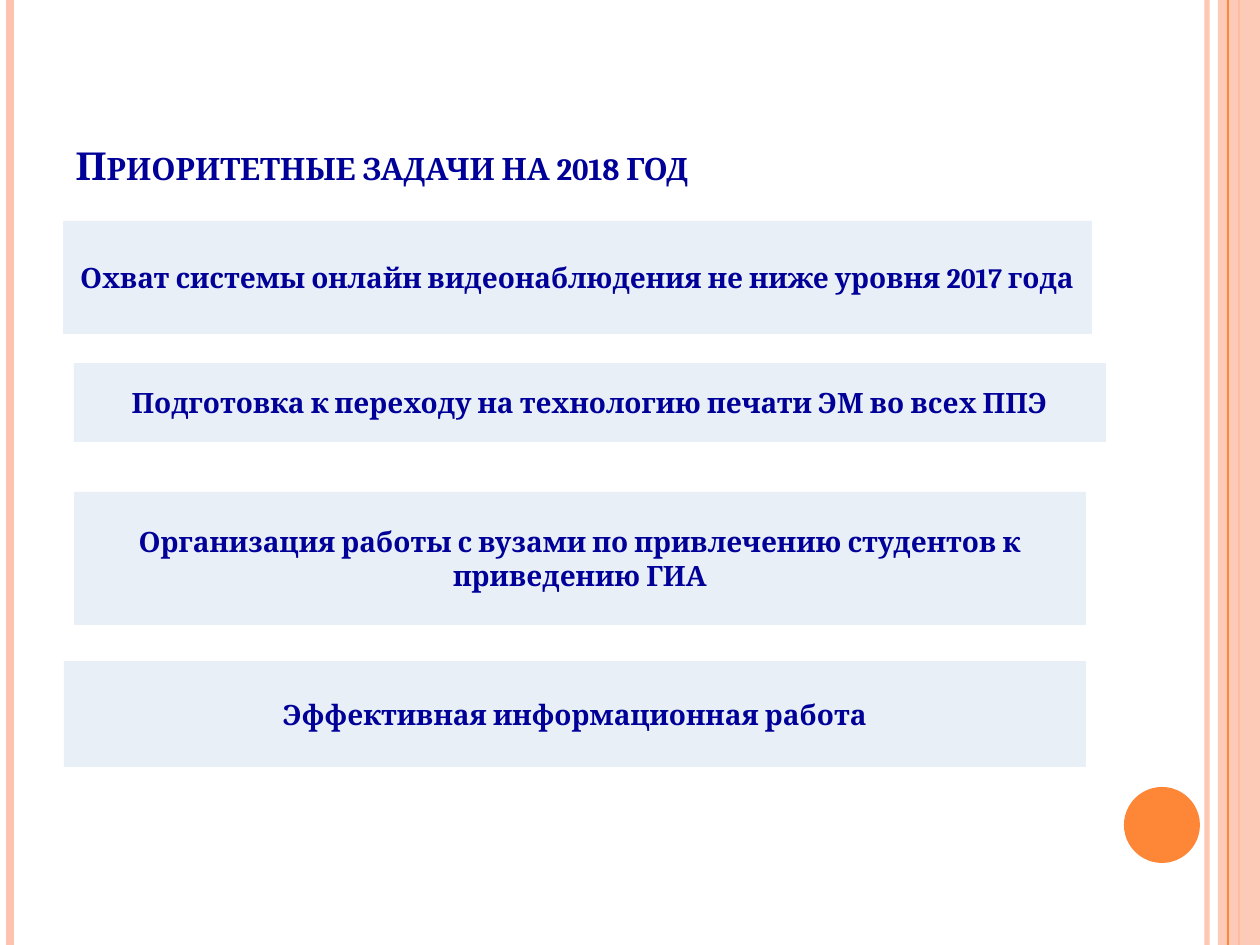
from lxml import etree
from pptx import Presentation
from pptx.dml.color import RGBColor
from pptx.enum.shapes import MSO_CONNECTOR, MSO_SHAPE
from pptx.enum.text import MSO_ANCHOR, PP_ALIGN
from pptx.oxml import parse_xml
from pptx.oxml.ns import qn
from pptx.util import Emu, Pt

PX = 914400 / 126
NS = 'xmlns:a="http://schemas.openxmlformats.org/drawingml/2006/main"'
PEACH = RGBColor(0xFE, 0xC3, 0xAE)
ORANGE = RGBColor(0xFE, 0x86, 0x37)
PALE_BLUE = RGBColor(0xB9, 0xCD, 0xE5)
NAVY = RGBColor(0x00, 0x00, 0x99)
FONT = "Cambria"
SLIDE_WIDTH, SLIDE_HEIGHT = 1260, 945

STRIPES = [(1207, PEACH, 3, 93), (10, PEACH, 4.5, 100), (1239, ORANGE, 1.5, 100)]
TASKS = [
    ("Охват системы онлайн видеонаблюдения не ниже уровня 2017 года", (63, 221, 1029, 113)),
    ("Подготовка к переходу на технологию печати ЭМ во всех ППЭ", (74, 363, 1032, 79)),
    ("Организация работы с вузами по привлечению студентов к приведению ГИА", (74, 492, 1012, 133)),
    ("Эффективная информационная работа", (64, 661, 1022, 106)),
]


def px(length):
    """Turn px into EMU."""
    return Emu(round(length * PX))


def set_opacity(properties, percent):
    """Give the first colour inside the properties an opacity."""
    colour = next(properties.iter(qn("a:srgbClr")))
    etree.SubElement(colour, qn("a:alpha"), val=str(percent * 1000))


def write_text(shape, text, size, align=PP_ALIGN.CENTER, anchor=MSO_ANCHOR.MIDDLE):
    """Write bold navy text into a shape and return its run."""
    frame = shape.text_frame
    frame.word_wrap = True
    frame.vertical_anchor = anchor
    paragraph = frame.paragraphs[0]
    paragraph.alignment = align
    run = paragraph.add_run()
    run.text = text
    run.font.size = Pt(size)
    run.font.name = FONT
    run.font.bold = True
    run.font.color.rgb = NAVY
    return run


def add_title(slide, text):
    """Place the title in small caps with a soft text shadow."""
    title = slide.shapes.title
    title.left, title.top, title.width, title.height = map(px, (63, 38, 1029, 157))
    run = write_text(title, text, 22, PP_ALIGN.LEFT, MSO_ANCHOR.BOTTOM)
    properties = run.font.fill._xPr
    properties.set("cap", "small")
    shadow = parse_xml(
        f'<a:effectLst {NS}><a:outerShdw blurRad="38100" dist="38100" dir="2700000">'
        '<a:srgbClr val="000000"><a:alpha val="43000"/></a:srgbClr></a:outerShdw></a:effectLst>'
    )
    properties.find(qn("a:solidFill")).addnext(shadow)


def add_stripe(slide, x, colour, width, opacity=100):
    """Draw a vertical line over the full slide height."""
    stripe = slide.shapes.add_connector(
        MSO_CONNECTOR.STRAIGHT, px(x), 0, px(x), px(SLIDE_HEIGHT)
    )
    stripe.line.color.rgb = colour
    stripe.line.width = Pt(width)
    properties = stripe._element.spPr
    if opacity < 100:
        set_opacity(properties, opacity)
    etree.SubElement(properties, qn("a:effectLst"))


def add_block(slide, kind, box, colour, opacity=100):
    """Draw a borderless filled shape."""
    block = slide.shapes.add_shape(kind, *map(px, box))
    block.shadow.inherit = False
    block.fill.solid()
    block.fill.fore_color.rgb = colour
    block.line.fill.background()
    if opacity < 100:
        set_opacity(block._element.spPr, opacity)
    return block


def add_decor(slide):
    """Draw the side stripes, the right band and the disc."""
    for stripe in STRIPES:
        add_stripe(slide, *stripe)
    add_block(slide, MSO_SHAPE.RECTANGLE, (1218, 0, 42, SLIDE_HEIGHT), PEACH, 87)
    add_stripe(slide, 1228, ORANGE, 0.75)
    add_block(slide, MSO_SHAPE.OVAL, (1124, 787, 76, 76), ORANGE)


def main():
    """Build and save the slide."""
    deck = Presentation()
    deck.slide_width, deck.slide_height = px(SLIDE_WIDTH), px(SLIDE_HEIGHT)
    slide = deck.slides.add_slide(deck.slide_layouts[5])
    add_decor(slide)
    add_title(slide, "Приоритетные задачи на 2018 год")
    for task, box in TASKS:
        panel = add_block(slide, MSO_SHAPE.RECTANGLE, box, PALE_BLUE, 31)
        write_text(panel, task, 16)
    deck.save("out.pptx")


if __name__ == "__main__":
    main()
